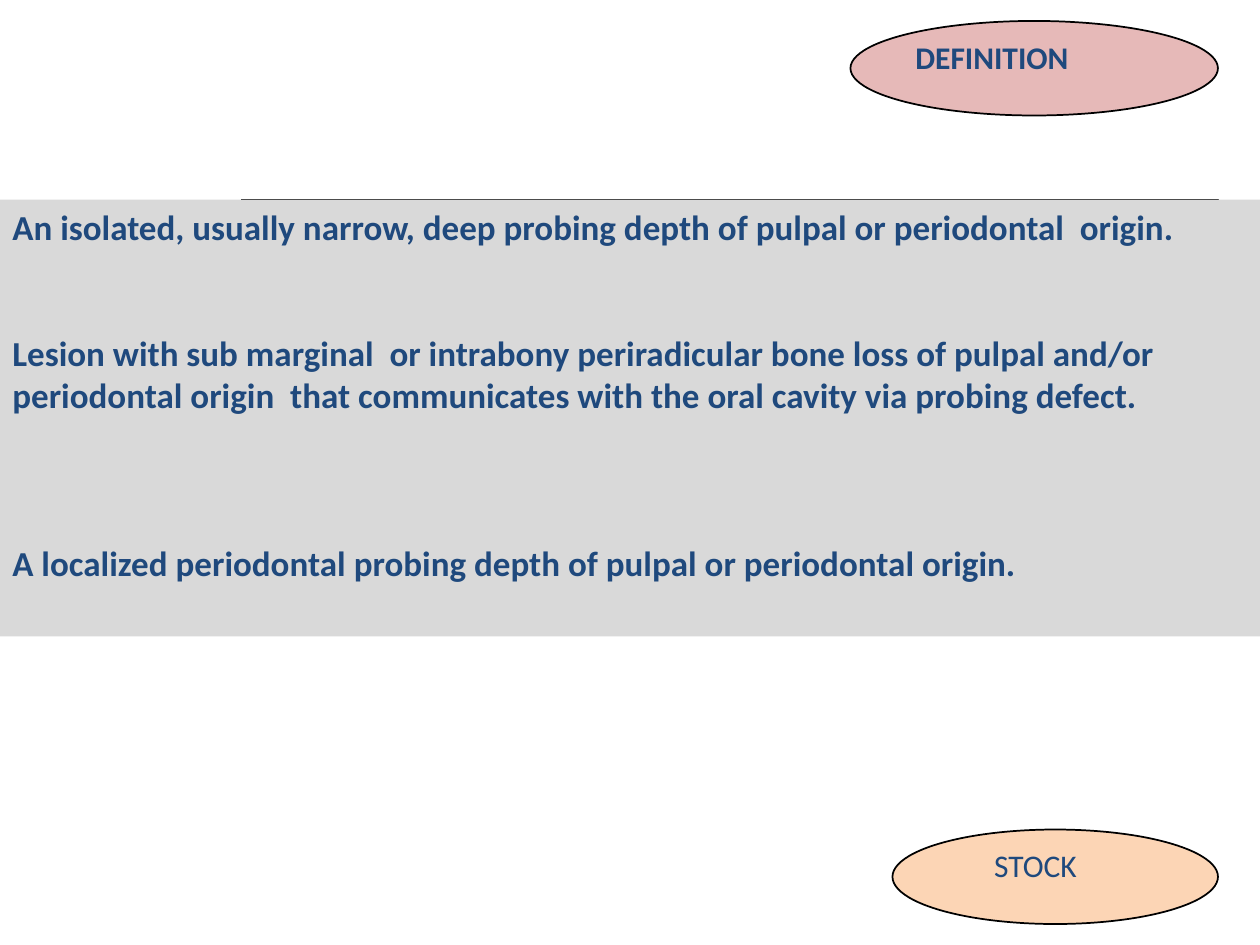
from pptx import Presentation
from pptx import util as u
from pptx.dml.color import RGBColor
from pptx.enum import shapes, text

NAVY = RGBColor(0x1F, 0x49, 0x7D)
BLACK = RGBColor(0x00, 0x00, 0x00)
CYAN = RGBColor(0x00, 0xFF, 0xFF)
PEACH = RGBColor(0xFC, 0xD5, 0xB5)
PINK = RGBColor(0xE6, 0xB9, 0xB8)
GREY = RGBColor(0xD9, 0xD9, 0xD9)

# The layout sits on a grid of twelve units to the inch.
UNIT = u.Inches(1) // 12
COLS, ROWS = 120, 90
RIGHT = 116
BODY_TOP = 19
LINE_PITCH = 24

prs = Presentation()
prs.slide_width, prs.slide_height = COLS * UNIT, ROWS * UNIT
s = prs.slides.add_slide(prs.slide_layouts[6])


def add_block(kind, left, top, width, height, fill, outline=None):
    """Add a filled shape, placed in grid units."""
    box = [int(v * UNIT) for v in (left, top, width, height)]
    sp = s.shapes.add_shape(kind, *box)
    sp.shadow.inherit = False
    sp.fill.solid()
    sp.fill.fore_color.rgb = fill
    if outline is None:
        sp.line.fill.background()
    else:
        sp.line.color.rgb = outline
        sp.line.width = u.Pt(1)
    return sp


def write(sp, paragraphs, size, bold):
    """Fill a shape from (text, blank lines before) pairs, left and top aligned."""
    tf = sp.text_frame
    tf.word_wrap = True
    tf.vertical_anchor = text.MSO_ANCHOR.TOP
    for i, (words, gap) in enumerate(paragraphs):
        p = tf.paragraphs[0] if i == 0 else tf.add_paragraph()
        p.text = words
        p.alignment = text.PP_ALIGN.LEFT
        p.space_before = u.Pt(gap * LINE_PITCH)
        p.font.name = "Calibri"
        p.font.size = u.Pt(size)
        p.font.bold = bold
        p.font.color.rgb = NAVY


RECT, OVAL = shapes.MSO_SHAPE.RECTANGLE, shapes.MSO_SHAPE.OVAL
add_block(RECT, 23, BODY_TOP, RIGHT - 23, 10, CYAN, BLACK)

# label, oval left, oval top, fill, text left, text width, bold
badges = [
    ("STOCK", 85, 79, PEACH, 93.5, 15.6, False),
    ("DEFINITION", 81, 2, PINK, 86, 26.6, True),
]
for label, left, top, fill, text_left, text_width, bold in badges:
    add_block(OVAL, left, top, RIGHT - left, 9, fill, BLACK)
    box = [int(v * UNIT) for v in (text_left, top + 1, text_width, 6)]
    write(s.shapes.add_textbox(*box), [(label, 0)], 18, bold)

body = add_block(RECT, 0, BODY_TOP, COLS, 41.6, GREY)
write(body, [
    ("An isolated, usually narrow, deep probing depth of pulpal or periodontal  origin.", 0),
    ("Lesion with sub marginal  or intrabony periradicular bone loss of pulpal and/or "
     "periodontal origin  that communicates with the oral cavity via probing defect.", 2),
    ("A localized periodontal probing depth of pulpal or periodontal origin.", 3),
], 20, True)

prs.save("out.pptx")
